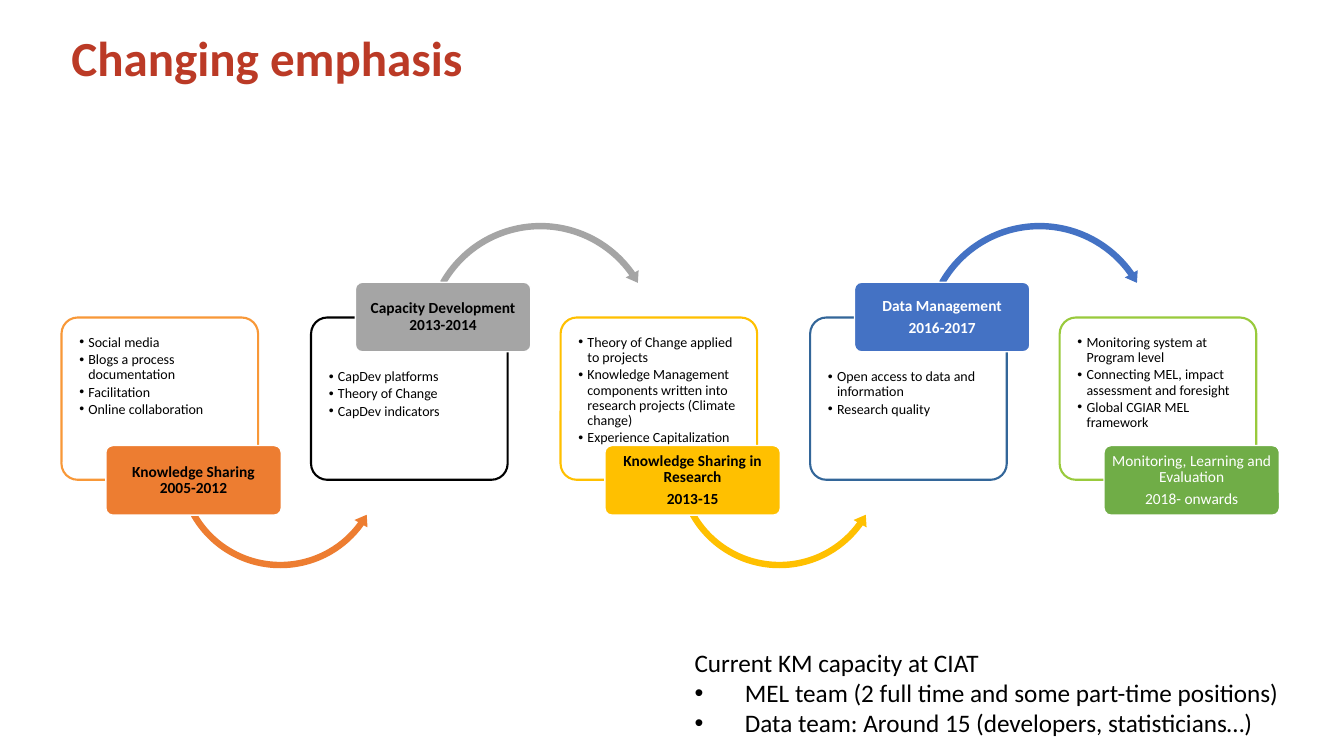
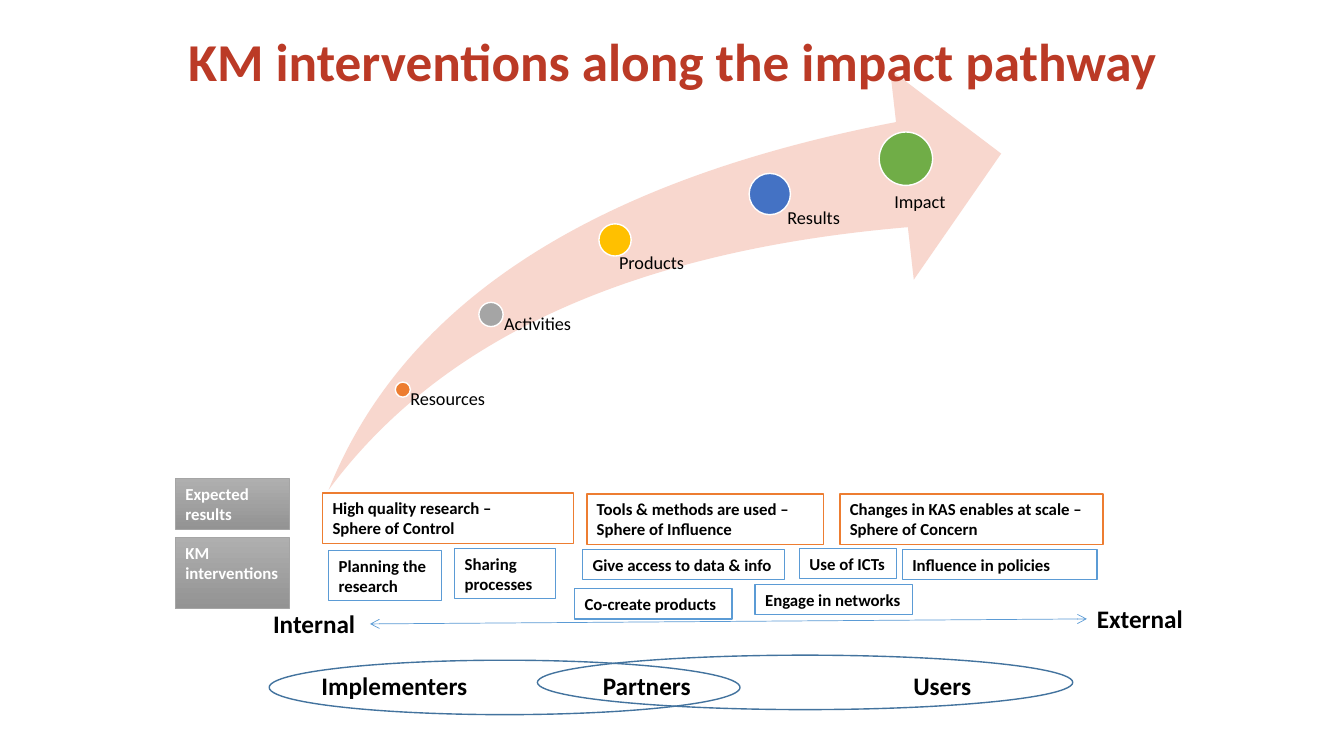
from copy import deepcopy
from dataclasses import dataclass

from lxml import etree
from pptx import Presentation
from pptx import util as u
from pptx.dml.color import RGBColor
from pptx.enum import shapes, text
from pptx.oxml.ns import qn

SHAPE = shapes.MSO_SHAPE
ALIGN = text.PP_ALIGN
ANCHOR = text.MSO_ANCHOR


@dataclass(frozen=True)
class Theme:
    font: str = "Calibri"
    title: str = "BB3A26"
    black: str = "000000"
    white: str = "FFFFFF"
    orange: str = "ED7D31"
    grey: str = "A5A5A5"
    yellow: str = "FFC000"
    blue: str = "4472C4"
    green: str = "70AD47"
    sky: str = "5B9BD5"
    oval: str = "43739E"
    swoosh: str = "F8D7CE"
    grey_light: str = "AFAFAF"
    grey_dark: str = "939393"
    list_size: int = 10
    label_size: int = 11
    box_size: int = 12
    stage_size: int = 13
    body_size: int = 18


THEME = Theme()

PHASES = [
    (["Social media", "Blogs a process documentation", "Facilitation", "Online collaboration"],
     ["Knowledge Sharing\n2005-2012"], "F89838", THEME.orange, THEME.black, True),
    (["CapDev platforms", "Theory of Change", "CapDev indicators"],
     ["Capacity Development\n2013-2014"], "000000", THEME.grey, THEME.black, True),
    (["Theory of Change applied to projects",
      "Knowledge Management components written into research projects (Climate change)",
      "Experience Capitalization"],
     ["Knowledge Sharing in Research", "2013-15"], "FFC000", THEME.yellow, THEME.black, True),
    (["Open access to data and information", "Research quality"],
     ["Data Management", "2016-2017"], "336699", THEME.blue, THEME.white, True),
    (["Monitoring system at Program level", "Connecting MEL, impact assessment and foresight",
      "Global CGIAR MEL framework"],
     ["Monitoring, Learning and Evaluation", "2018- onwards"],
     "99CA3C", THEME.green, THEME.white, False),
]
CAPACITY_HEADING = "Current KM capacity at CIAT"
CAPACITY = ["MEL team (2 full time and some part-time positions)",
            "Data team: Around 15 (developers, statisticians…)"]

STAGES = [
    ("Resources", THEME.orange, 3.92, 3.79, 0.15, 4.07, 3.87),
    ("Activities", THEME.grey, 4.75, 3.0, 0.24, 5.0, 3.12),
    ("Products", THEME.yellow, 5.94, 2.22, 0.32, 6.14, 2.52),
    ("Results", THEME.blue, 7.43, 1.72, 0.41, 7.81, 2.07),
    ("Impact", THEME.green, 8.72, 1.31, 0.53, 8.87, 1.91),
]
ROW_HEADINGS = [
    ("KM\ninterventions", 1.74, 5.33, 1.13, 0.71),
    ("Expected\nresults", 1.74, 4.75, 1.13, 0.5),
]
INTERVENTIONS = [
    (["Sharing processes"], 4.51, 5.44, 1.0, 0.5, True),
    (["Co-create products"], 5.7, 5.84, 1.56, 0.3, True),
    (["Influence in policies"], 8.95, 5.45, 1.93, 0.3, True),
    (["Planning the\nresearch"], 3.26, 5.46, 1.12, 0.5, False),
    (["Use of ICTs"], 7.93, 5.44, 0.96, 0.3, False),
    (["Give access to data & info"], 5.78, 5.45, 2.0, 0.3, True),
    (["Engage in networks"], 7.49, 5.8, 1.56, 0.3, True),
]
RESULTS = [
    (["High quality research –\nSphere of Control"], 3.2, 4.89, 2.49, 0.5, True),
    (["Tools & methods are used –", "Sphere of Influence"], 5.82, 4.9, 2.35, 0.5, True),
    (["Changes in KAS enables at scale – Sphere of Concern"], 8.33, 4.9, 2.61, 0.5, True),
]
ACTORS = [("Implementers", 3.09, 1.66), ("Partners", 5.88, 1.08), ("Users", 8.96, 0.9)]
OVALS = [(2.67, 6.55, 4.67, 0.54), (5.33, 6.5, 5.31, 0.54)]


def color(value):
    return RGBColor.from_string(value)


def inches(*values):
    return [u.Inches(value) for value in values]


def add_bullet(para, indent):
    props = para._p.get_or_add_pPr()
    props.set("marL", str(u.Inches(indent)))
    props.set("indent", str(-u.Inches(indent)))
    etree.SubElement(props, qn("a:buFont"), typeface="Arial")
    etree.SubElement(props, qn("a:buChar"), char="•")


def write(box, paragraphs, size=THEME.body_size, ink=THEME.black, bold=False,
          align=ALIGN.LEFT, anchor=ANCHOR.TOP, insets=(0.1, 0.05, 0.1, 0.05),
          spacing=None, after=None, bullet=None, plain_first=False, wrap=True):
    frame = box.text_frame
    frame.word_wrap = wrap
    frame.vertical_anchor = anchor
    frame.margin_left, frame.margin_top, frame.margin_right, frame.margin_bottom = inches(*insets)
    for index, content in enumerate(paragraphs):
        para = frame.add_paragraph() if index else frame.paragraphs[0]
        if bullet and (index or not plain_first):
            add_bullet(para, bullet)
        para.text = content
        para.alignment = align
        if spacing:
            para.line_spacing = spacing
        if after:
            para.space_after = u.Pt(after)
        for span in para.runs:
            span.font.name = THEME.font
            span.font.size = u.Pt(size)
            span.font.bold = bold
            span.font.color.rgb = color(ink)
        for line_break in para._p.findall(qn("a:br")):
            line_break.insert(0, deepcopy(para.runs[0]._r.rPr))
    return box


def add_text(page, place, paragraphs, **style):
    return write(page.shapes.add_textbox(*inches(*place)), paragraphs, **style)


def add_shape(page, kind, place, fill=None, line=None, weight=1, adjust=()):
    shape = page.shapes.add_shape(kind, *inches(*place))
    shape.shadow.inherit = False
    if fill:
        shape.fill.solid()
        shape.fill.fore_color.rgb = color(fill)
    else:
        shape.fill.background()
    if line:
        shape.line.color.rgb = color(line)
        shape.line.width = u.Pt(weight)
    else:
        shape.line.fill.background()
    for index, value in enumerate(adjust):
        shape.adjustments[index] = value
    return shape


def add_title(page, place, content, size, **style):
    add_text(page, place, [content], size=size, ink=THEME.title, bold=True, **style)


def add_double_arrow(page, left_box, right_box):
    arrow = page.shapes.add_connector(shapes.MSO_CONNECTOR.STRAIGHT, 0, 0, 0, 0)
    arrow.begin_connect(left_box, 3)
    arrow.end_connect(right_box, 1)
    arrow.line.color.rgb = color(THEME.sky)
    arrow.line.width = u.Pt(0.5)
    line = arrow.line._get_or_add_ln()
    for end in ("headEnd", "tailEnd"):
        etree.SubElement(line, qn(f"a:{end}"), type="arrow")
    etree.SubElement(arrow._element.spPr, qn("a:effectLst"))


def add_phase(page, index, phase):
    items, label, outline, fill, ink, bold = phase
    left = 0.61 + 2.475 * index
    label_on_top = index % 2 == 1
    card = add_shape(page, SHAPE.ROUNDED_RECTANGLE, (left, 3.15, 1.95, 1.61),
                     THEME.white, outline, 1.5, [0.1])
    write(card, items, size=THEME.list_size, spacing=0.9, after=1.5, bullet=0.09,
          insets=(0.13, 0.47 if label_on_top else 0.13, 0.13, 0))
    if index < len(PHASES) - 1:
        if label_on_top:
            add_shape(page, SHAPE.CIRCULAR_ARROW, (left + 1.09, 2.17, 2.37, 2.37), fill,
                      adjust=[0.027, 3.27, 194.98, 125.75, 0.031])
        else:
            add_shape(page, SHAPE.LEFT_CIRCULAR_ARROW, (left + 1.11, 3.56, 2.12, 2.12), fill,
                      adjust=[0.03, 3.68, 21.44, 90.25, 0.035])
    tag = add_shape(page, SHAPE.ROUNDED_RECTANGLE,
                    (left + 0.44, 2.8 if label_on_top else 4.42, 1.74, 0.69),
                    fill, THEME.white, 1, [0.1])
    write(tag, label, size=THEME.label_size, ink=ink, bold=bold, align=ALIGN.CENTER,
          anchor=ANCHOR.MIDDLE, insets=(0.02,) * 4, spacing=0.9, after=3.85)


def build_emphasis(page):
    add_title(page, (0.61, 0.39, 12.21, 0.55), "Changing emphasis", 35, spacing=u.Pt(30))
    for index, phase in enumerate(PHASES):
        add_phase(page, index, phase)
    add_text(page, (6.79, 6.37, 6.5, 1.01), [CAPACITY_HEADING, *CAPACITY],
             bullet=0.5, plain_first=True)


def build_pathway(page):
    add_shape(page, SHAPE.SWOOSH_ARROW, (3.26, 0.69, 6.67, 4.17), THEME.swoosh,
              adjust=[0.25, 0.25])
    for name, fill, left, top, size, text_left, text_top in STAGES:
        add_shape(page, SHAPE.OVAL, (left, top, size, size), fill, THEME.white)
        add_text(page, (text_left, text_top, 1.1, 0.3), [name], size=THEME.stage_size,
                 insets=(0,) * 4, spacing=0.9)
    internal = add_text(page, (2.61, 5.99, 1.06, 0.4), ["Internal"], bold=True)
    external = add_text(page, (10.78, 5.94, 1.06, 0.4), ["External"], bold=True)
    add_double_arrow(page, internal, external)
    for name, left, width in ACTORS:
        add_text(page, (left, 6.6, width, 0.4), [name], bold=True)
    for place in OVALS:
        add_shape(page, SHAPE.OVAL, place, line=THEME.oval)
    for boxes, outline in ((INTERVENTIONS, THEME.sky), (RESULTS, THEME.orange)):
        for lines, *place, wrap in boxes:
            box = add_shape(page, SHAPE.RECTANGLE, place, THEME.white, outline)
            write(box, lines, size=THEME.box_size, bold=True, wrap=wrap)
    for heading, *place in ROW_HEADINGS:
        box = add_shape(page, SHAPE.RECTANGLE, place, line=THEME.grey, weight=0.5)
        box.fill.gradient()
        box.fill.gradient_angle = 270
        for stop, shade in zip(box.fill.gradient_stops, (THEME.grey_light, THEME.grey_dark)):
            stop.color.rgb = color(shade)
        write(box, [heading], size=THEME.box_size, ink=THEME.white, bold=True, wrap=False)
    add_title(page, (1.67, 0.25, 10, 0.69), "KM interventions along the impact pathway", 38,
              align=ALIGN.CENTER, anchor=ANCHOR.MIDDLE)


def main():
    deck = Presentation()
    deck.slide_width, deck.slide_height = inches(13.33, 7.5)
    for build in (build_emphasis, build_pathway):
        build(deck.slides.add_slide(deck.slide_layouts[6]))
    deck.save("out.pptx")


if __name__ == "__main__":
    main()
